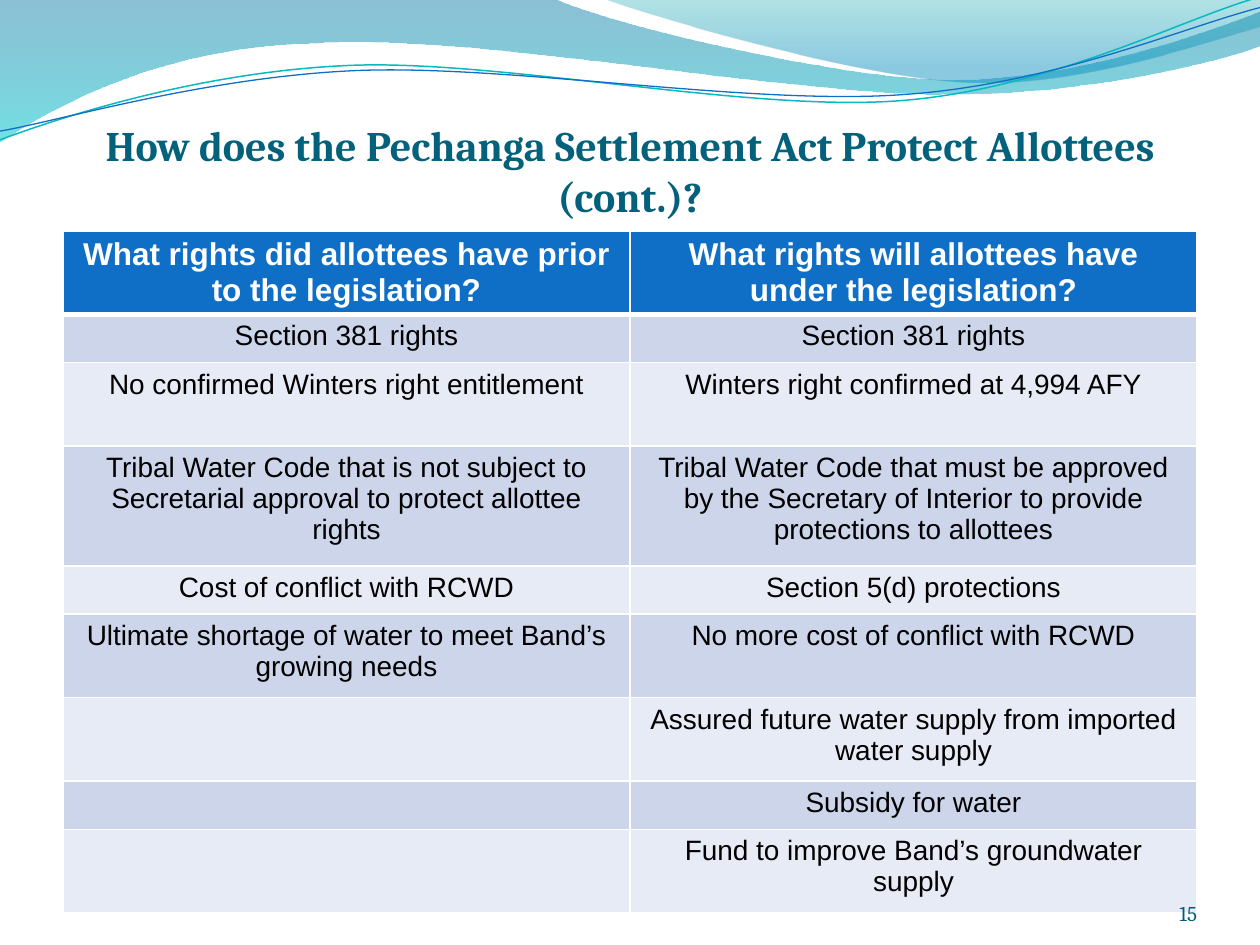
from dataclasses import dataclass
from math import cos, radians, sin

from lxml.etree import SubElement
from pptx import Presentation
from pptx.dml.color import RGBColor
from pptx.enum.text import MSO_ANCHOR, PP_ALIGN
from pptx.oxml import parse_xml
from pptx.oxml.ns import nsdecls, qn
from pptx.util import Pt

COLORS = {
    "title": "04617B", "number": "045D75", "header": "0F6FC6",
    "band_dark": "CCD5EA", "band_light": "E7EBF5",
    "white": "FFFFFF", "black": "000000",
    "deep": "0074A1", "aqua": "00C6CF", "teal": "00A1A9", "sky": "008BBF",
    "teal_line": "0AB8BF", "blue_line": "0F6FC6",
}
LINE_TILT = 357.3
LINE_PIVOT = (359.4, 42)

Point = tuple[float, float]


@dataclass
class Stop:
    position: float
    color: str
    opacity: int


@dataclass
class Wave:
    """A path of lines (one point) and cubic curves (three points)."""
    start: Point
    segments: list[tuple[Point, ...]]
    stops: tuple[Stop, ...] = ()
    line_color: str = ""
    line_width: float = 0


@dataclass
class Label:
    text: str
    left: float
    top: float
    width: float
    height: float
    size: float
    color: str
    align: PP_ALIGN
    bold: bool = False
    top_inset: float = 0


@dataclass
class Row:
    height: float
    before: str
    after: str


WAVES = [
    Wave((0, 0), [
        ((316.8, -0.7),),
        ((342.7, 12.2), (478.1, 45.4), (545.8, 45.4)),
        ((614.2, 45.4), (689.8, 18.7), (720, 6.5)),
        ((720.7, 25.9),),
        ((707.8, 31.7), (626.4, 54.7), (537.1, 54)),
        ((447.8, 54), (275, 20.2), (185, 24.5)),
        ((92.9, 25.9), (33.1, 59.8), (-0.7, 81.4)),
        ((0, 0),),
    ], stops=(Stop(0, "deep", 45), Stop(1, "aqua", 55))),
    Wave((344.9, -0.7), [
        ((366.5, 7.9), (491, 44.6), (553.7, 46.8)),
        ((616.3, 49.7), (691.9, 23), (720, 15.1)),
        ((720, 0),),
        ((344.9, -0.7),),
    ], stops=(Stop(0, "teal", 30), Stop(0.8, "sky", 45))),
    Wave((0, 79.9), [
        ((34.6, 67), (113.8, 41), (199.4, 37.4)),
        ((284.4, 33.8), (427, 64.1), (513.4, 57.6)),
        ((599.8, 51.1), (675.4, 10.8), (718.6, -1.4)),
    ], line_color="teal_line", line_width=0.85),
    Wave((0, 74.9), [
        ((33.8, 69.1), (118.1, 43.9), (203.8, 40.3)),
        ((290.2, 36.7), (429.8, 60.5), (516.2, 54)),
        ((601.9, 48.2), (677.5, 15.1), (720, 4.3)),
    ], line_color="blue_line", line_width=0.75),
]

TITLE = Label("How does the Pechanga Settlement Act Protect Allottees (cont.)?",
              36, 55.4, 648, 70.6, 24, "title", PP_ALIGN.CENTER, True, 3.6)
NUMBER = Label("15", 624, 500.4, 60, 28.8, 12, "number", PP_ALIGN.RIGHT)

ONE_LINE, TWO_LINES, THREE_LINES = 27.6, 47.7, 68.4
ROWS = [
    Row(TWO_LINES, "What rights did allottees have prior to the legislation?",
        "What rights will allottees have under the legislation?"),
    Row(ONE_LINE, "Section 381 rights", "Section 381 rights"),
    Row(TWO_LINES, "No confirmed Winters right entitlement",
        "Winters right confirmed at 4,994 AFY"),
    Row(THREE_LINES,
        "Tribal Water Code that is not subject to Secretarial approval to protect allottee rights",
        "Tribal Water Code that must be approved by the Secretary of Interior "
        "to provide protections to allottees"),
    Row(ONE_LINE, "Cost of conflict with RCWD", "Section 5(d) protections"),
    Row(TWO_LINES, "Ultimate shortage of water to meet Band’s growing needs",
        "No more cost of conflict with RCWD"),
    Row(TWO_LINES, "", "Assured future water supply from imported water supply"),
    Row(ONE_LINE, "", "Subsidy for water"),
    Row(TWO_LINES, "", "Fund to improve Band’s groundwater supply"),
]


def rgb(name: str) -> RGBColor:
    return RGBColor.from_string(COLORS[name])


def style(paragraph, face: str, size: float, color: str, bold: bool, align: PP_ALIGN) -> None:
    paragraph.alignment = align
    font = paragraph.font
    font.name, font.size, font.bold = face, Pt(size), bold
    font.color.rgb = rgb(color)


def level(point: Point) -> Point:
    """Undo the tilt of a line, so that the shape's rotation can restore it."""
    angle = radians(-LINE_TILT)
    x, y = point[0] - LINE_PIVOT[0], point[1] - LINE_PIVOT[1]
    return (LINE_PIVOT[0] + x * cos(angle) - y * sin(angle),
            LINE_PIVOT[1] + x * sin(angle) + y * cos(angle))


def draw_wave(page, wave: Wave) -> None:
    start, segments = wave.start, wave.segments
    if not wave.stops:
        start = level(start)
        segments = [tuple(level(point) for point in segment) for segment in segments]
    builder = page.shapes.build_freeform(Pt(start[0]), Pt(start[1]))
    builder.add_line_segments([(Pt(x), Pt(y)) for x, y in (s[-1] for s in segments)],
                              close=bool(wave.stops))
    shape = builder.convert_to_shape()
    shape.shadow.inherit = False

    # Bend the straight segments that have control points
    for line, segment in zip(list(shape.element.iter(qn("a:lnTo"))), segments):
        if len(segment) == 3:
            line.tag = qn("a:cubicBezTo")
            line.clear()
            for x, y in segment:
                SubElement(line, qn("a:pt"), x=str(Pt(x) - shape.left), y=str(Pt(y) - shape.top))

    if not wave.stops:
        shape.rotation = LINE_TILT
        shape.fill.background()
        shape.line.color.rgb = rgb(wave.line_color)
        shape.line.width = Pt(wave.line_width)
        return
    shape.line.fill.background()
    shape.fill.gradient()
    shape.fill.gradient_angle = 270
    for target, stop in zip(shape.fill.gradient_stops, wave.stops):
        target.position = stop.position
        target.color.rgb = rgb(stop.color)
    for color, stop in zip(shape.element.spPr.iter(qn("a:srgbClr")), wave.stops):
        SubElement(color, qn("a:alpha"), val=str(stop.opacity * 1000))


def draw_label(page, label: Label) -> None:
    box = page.shapes.add_textbox(Pt(label.left), Pt(label.top), Pt(label.width), Pt(label.height))
    frame = box.text_frame
    frame.word_wrap = True
    frame.vertical_anchor = MSO_ANCHOR.BOTTOM
    frame.margin_left = frame.margin_right = frame.margin_bottom = 0
    frame.margin_top = Pt(label.top_inset)
    frame.text = label.text
    style(frame.paragraphs[0], "Cambria", label.size, label.color, label.bold, label.align)


def set_borders(cell, widths: dict[str, float]) -> None:
    properties = cell._tc.get_or_add_tcPr()
    for index, (side, width) in enumerate(widths.items()):
        properties.insert(index, parse_xml(
            f'<a:ln{side} {nsdecls("a")} w="{Pt(width)}"><a:solidFill>'
            f'<a:srgbClr val="{COLORS["white"]}"/></a:solidFill></a:ln{side}>'))


def draw_table(page, rows: list[Row]) -> None:
    total = sum(row.height for row in rows)
    table = page.shapes.add_table(len(rows), 2, Pt(36), Pt(132), Pt(648), Pt(total)).table
    for index, row in enumerate(rows):
        table.rows[index].height = Pt(row.height)
        header = index == 0
        band = "header" if header else "band_dark" if index % 2 else "band_light"
        for cell, text in zip(table.rows[index].cells, (row.before, row.after)):
            cell.text = text
            style(cell.text_frame.paragraphs[0], "Arial", 18 if header else 16,
                  "white" if header else "black", header, PP_ALIGN.CENTER)
            cell.fill.solid()
            cell.fill.fore_color.rgb = rgb(band)
            if header:
                cell.margin_bottom = 0
                set_borders(cell, {"L": 1, "R": 1, "T": 1, "B": 3})


def main() -> None:
    deck = Presentation()
    deck.slide_width, deck.slide_height = Pt(720), Pt(540)
    page = deck.slides.add_slide(deck.slide_layouts[6])

    # Wavy banner
    for wave in WAVES:
        draw_wave(page, wave)

    # Title, comparison table and page number
    draw_label(page, TITLE)
    draw_table(page, ROWS)
    draw_label(page, NUMBER)

    deck.save("out.pptx")


if __name__ == "__main__":
    main()
